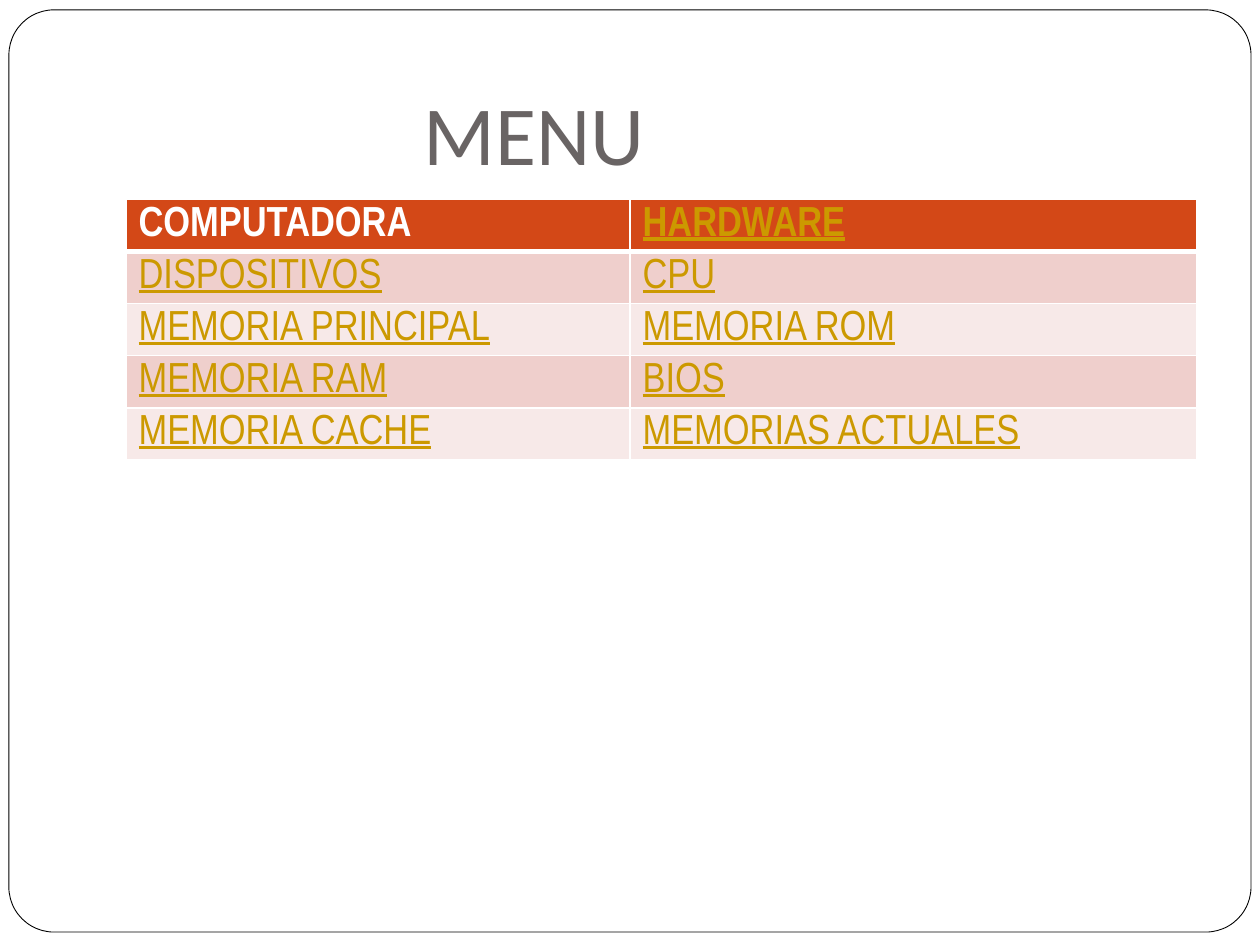
from dataclasses import dataclass

from lxml import etree
from pptx import Presentation
from pptx.dml.color import RGBColor
from pptx.enum.shapes import MSO_SHAPE
from pptx.enum.text import MSO_ANCHOR
from pptx.oxml.ns import qn
from pptx.util import Cm, Pt

ROUNDED = MSO_SHAPE.ROUNDED_RECTANGLE
BOTTOM = MSO_ANCHOR.BOTTOM

TITLE = "MENU"
MENU = [
    ("COMPUTADORA", "HARDWARE"),
    ("DISPOSITIVOS", "CPU"),
    ("MEMORIA PRINCIPAL", "MEMORIA ROM"),
    ("MEMORIA RAM", "BIOS"),
    ("MEMORIA CACHE", "MEMORIAS ACTUALES"),
]
COLUMN_WIDTHS = (10.16, 11.43)
ROW_HEIGHT = 1.05
CELL_BOTTOM = -0.1  # lets the tall line box fit the low rows
LEFT = 2.54
WIDTH = sum(COLUMN_WIDTHS)


@dataclass(frozen=True)
class Theme:
    title_font: str = "Calibri"
    table_font: str = "Arial Narrow"
    title_size: int = 48
    table_size: int = 24
    white: str = "FFFFFF"
    frame: str = "000000"
    title: str = "696464"
    link: str = "CC9900"
    header: str = "D34817"
    bands: tuple = ("EFCFCC", "F7E9E8")


THEME = Theme()


def add_span(para, text, font, size, color, bold=False, underline=False):
    span = para.add_run()
    span.text = text
    span.font.name = font
    span.font.size = Pt(size)
    span.font.color.rgb = RGBColor.from_string(color)
    span.font.bold = bold
    span.font.underline = underline


def set_borders(cell, top, bottom):
    """Draw white cell borders, 1 pt wide at the sides."""
    properties = cell._tc.get_or_add_tcPr()
    widths = {"lnL": 1, "lnR": 1, "lnT": top, "lnB": bottom}
    for position, (tag, width) in enumerate(widths.items()):
        line = etree.Element(qn(f"a:{tag}"), w=str(Pt(width)))
        fill = etree.SubElement(line, qn("a:solidFill"))
        etree.SubElement(fill, qn("a:srgbClr"), val=THEME.white)
        properties.insert(position, line)


def add_frame(page):
    frame = page.shapes.add_shape(ROUNDED, Cm(0.18), Cm(0.2), Cm(25.04), Cm(18.59))
    frame.adjustments[0] = 0.049
    frame.shadow.inherit = False
    frame.fill.solid()
    frame.fill.fore_color.rgb = RGBColor.from_string(THEME.white)
    frame.line.color.rgb = RGBColor.from_string(THEME.frame)
    frame.line.width = Pt(0.5)


def add_title(page):
    box = page.shapes.add_textbox(Cm(LEFT), Cm(0.74), Cm(WIDTH), Cm(3.18))
    body = box.text_frame
    body.word_wrap = True
    body.vertical_anchor = BOTTOM
    body.margin_left = Cm(6)
    body.margin_bottom = Cm(0.25)
    add_span(body.paragraphs[0], TITLE, THEME.title_font, THEME.title_size, THEME.title)


def add_menu(page):
    table = page.shapes.add_table(
        len(MENU), len(COLUMN_WIDTHS), Cm(LEFT), Cm(4.02),
        Cm(WIDTH), Cm(ROW_HEIGHT * len(MENU))).table
    for column, width in zip(table.columns, COLUMN_WIDTHS):
        column.width = Cm(width)
    for r, entries in enumerate(MENU):
        header = r == 0
        table.rows[r].height = Cm(ROW_HEIGHT)
        color = THEME.header if header else THEME.bands[(r - 1) % 2]
        for c, text in enumerate(entries):
            cell = table.cell(r, c)
            cell.margin_bottom = Cm(CELL_BOTTOM)
            cell.fill.solid()
            cell.fill.fore_color.rgb = RGBColor.from_string(color)
            set_borders(cell, top=3 if r == 1 else 1, bottom=3 if header else 1)
            linked = (r, c) != (0, 0)
            add_span(cell.text_frame.paragraphs[0], text, THEME.table_font,
                     THEME.table_size, THEME.link if linked else THEME.white,
                     bold=header, underline=linked)


def main():
    deck = Presentation()
    deck.slide_width, deck.slide_height = Cm(25.4), Cm(19.05)
    page = deck.slides.add_slide(deck.slide_layouts[6])
    add_frame(page)
    add_title(page)
    add_menu(page)
    deck.save("out.pptx")


if __name__ == "__main__":
    main()
